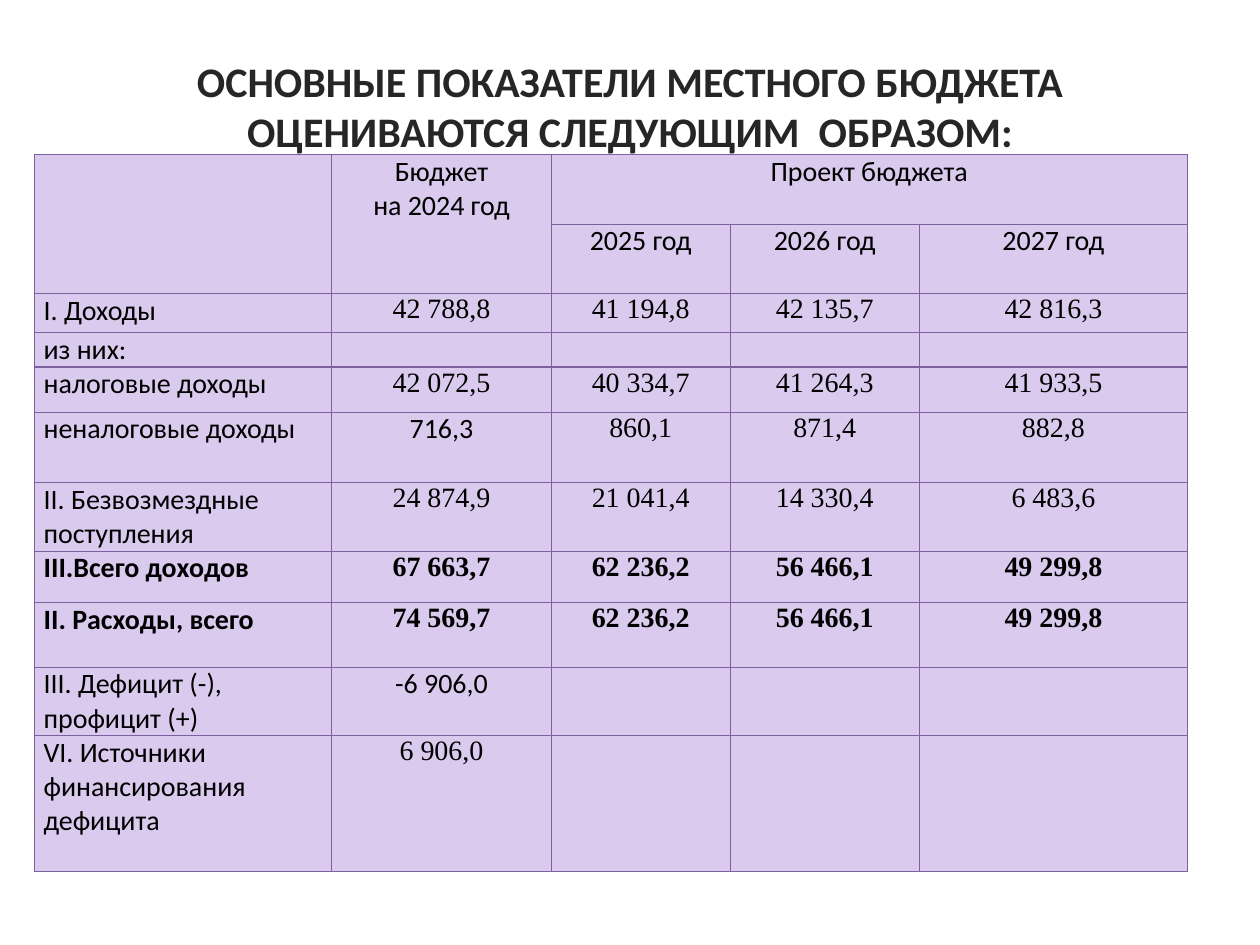
from lxml.etree import SubElement
from pptx import Presentation
from pptx.dml.color import RGBColor
from pptx.enum.text import MSO_ANCHOR, PP_ALIGN as Align
from pptx.oxml.ns import qn
from pptx.util import Cm, Pt

COLORS = {"title": "262626", "text": "000000", "fill": "DACAED", "border": "7D60A0"}
SANS, SERIF = "Calibri", "Times New Roman"
TITLE = "ОСНОВНЫЕ ПОКАЗАТЕЛИ МЕСТНОГО БЮДЖЕТА ОЦЕНИВАЮТСЯ СЛЕДУЮЩИМ  ОБРАЗОМ:"

COLUMN_WIDTHS = [5.99, 4.42, 3.61, 3.81, 5.41]
ROW_HEIGHTS = [1.4, 1.4, 0.79, 0.67, 0.91, 1.42, 1.37, 1.04, 1.3, 1.38, 2.74]
ROWS = [
    ["", "Бюджет\nна 2024 год", "Проект бюджета", "", ""],
    ["", "", "2025 год", "2026 год", "2027 год"],
    ["I. Доходы", "42 788,8", "41 194,8", "42 135,7", "42 816,3"],
    ["из них:", "", "", "", ""],
    ["налоговые доходы", "42 072,5", "40 334,7", "41 264,3", "41 933,5"],
    ["неналоговые доходы", "716,3", "860,1", "871,4", "882,8"],
    ["II. Безвозмездные поступления", "24 874,9", "21 041,4", "14 330,4", "6 483,6"],
    ["III.Всего доходов", "67 663,7", "62 236,2", "56 466,1", "49 299,8"],
    ["II. Расходы, всего", "74 569,7", "62 236,2", "56 466,1", "49 299,8"],
    ["III. Дефицит (-), профицит (+)", "-6 906,0", "", "", ""],
    ["VI. Источники финансирования дефицита", "6 906,0", "", "", ""],
]
HEADER_ROWS = 2
BOLD_ROWS = {7, 8}
SANS_VALUES = {(5, 1), (9, 1)}
MERGES = [((0, 0), (1, 0)), ((0, 1), (1, 1)), ((0, 2), (0, 4))]


def color(name):
    return RGBColor.from_string(COLORS[name])


def set_font(paragraph, name, size, color_name, bold):
    font = paragraph.font
    font.name, font.size, font.bold = name, Pt(size), bold
    font.color.rgb = color(color_name)


def add_title(slide, left, top, width, height):
    title = slide.shapes.title
    title.left, title.top, title.width, title.height = left, top, width, height
    frame = title.text_frame
    frame.text = TITLE
    frame.word_wrap = True
    frame.vertical_anchor = MSO_ANCHOR.MIDDLE
    paragraph = frame.paragraphs[0]
    paragraph.alignment = Align.CENTER
    set_font(paragraph, SANS, 24, "title", True)


def set_borders(cell):
    properties = cell._tc.get_or_add_tcPr()
    for index, side in enumerate(("lnL", "lnR", "lnT", "lnB")):
        line = properties.makeelement(qn(f"a:{side}"), {"w": str(Pt(0.75))})
        fill = SubElement(line, qn("a:solidFill"))
        SubElement(fill, qn("a:srgbClr"), val=COLORS["border"])
        properties.insert(index, line)


def format_cell(cell, text, row, column):
    cell.text = text
    cell.margin_left = cell.margin_right = Cm(0.18)
    cell.margin_top = cell.margin_bottom = 0
    cell.fill.solid()
    cell.fill.fore_color.rgb = color("fill")
    set_borders(cell)
    is_value = row >= HEADER_ROWS and column > 0 and (row, column) not in SANS_VALUES
    for paragraph in cell.text_frame.paragraphs:
        paragraph.alignment = Align.CENTER if column else Align.LEFT
        set_font(paragraph, SERIF if is_value else SANS, 16, "text", row in BOLD_ROWS)


def add_budget_table(slide, left, top, width, height):
    table = slide.shapes.add_table(
        len(ROWS), len(COLUMN_WIDTHS), left, top, width, height).table
    table.first_row = table.horz_banding = False
    for column, column_width in zip(table.columns, COLUMN_WIDTHS):
        column.width = Cm(column_width)
    for row, row_height in zip(table.rows, ROW_HEIGHTS):
        row.height = Cm(row_height)
    for row, texts in enumerate(ROWS):
        for column, text in enumerate(texts):
            format_cell(table.cell(row, column), text, row, column)
    for first, last in MERGES:
        table.cell(*first).merge(table.cell(*last))


def main():
    presentation = Presentation()
    presentation.slide_width, presentation.slide_height = Cm(25.4), Cm(19.05)
    # Title Only layout
    slide = presentation.slides.add_slide(presentation.slide_layouts[5])
    # Heading
    add_title(slide, Cm(1.27), Cm(0.33), Cm(22.86), Cm(3.6))
    # Budget figures
    add_budget_table(slide, Cm(0.7), Cm(3.12),
                     Cm(sum(COLUMN_WIDTHS)), Cm(sum(ROW_HEIGHTS)))
    presentation.save("out.pptx")


if __name__ == "__main__":
    main()
